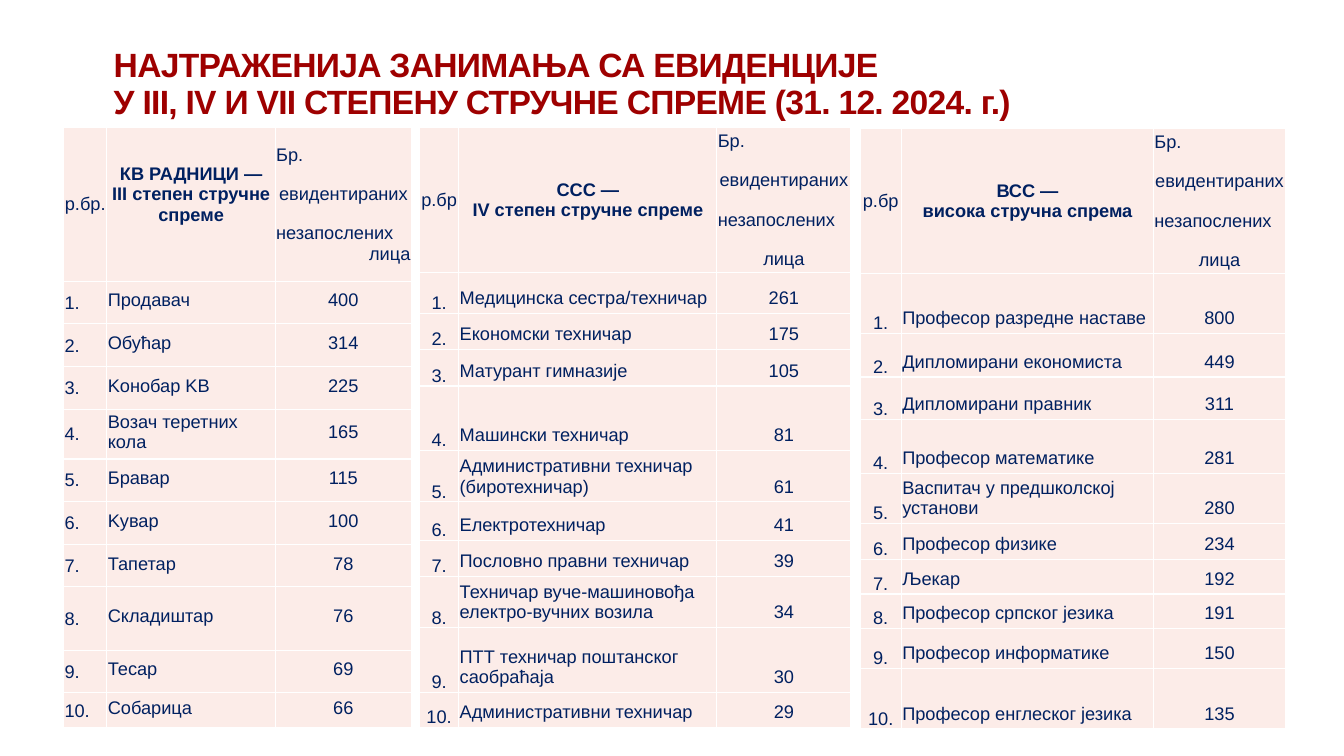
from lxml.etree import SubElement
from pptx import Presentation
from pptx.dml.color import RGBColor
from pptx.enum.text import MSO_ANCHOR as Anchor, PP_ALIGN as Align
from pptx.oxml import parse_xml
from pptx.oxml.ns import nsdecls, qn
from pptx.util import Inches, Pt

COLORS = {"title": "9E0000", "text": "002060", "cell": "FCECE8", "border": "FFFFFF"}
FONT = "Arial"
TITLE = ("НАЈТРАЖЕНИЈА ЗАНИМАЊА СА ЕВИДЕНЦИЈЕ\v"
         "У III, IV И VII СТЕПЕНУ СТРУЧНЕ СПРЕМЕ (31. 12. 2024. г.)")
COUNT_HEADING = ["Бр.", "евидентираних", "незапослених", "лица"]
HEADING_GAP = 13.5

LEVELS = [
    {
        "at": (0.63, 1.26), "columns": (0.43, 1.67, 1.35),
        "rows": (1.53, 0.42, 0.43, 0.42, 0.42, 0.42, 0.43, 0.42, 0.63, 0.42, 0.35),
        "number": "р.бр.", "heading": ["КВ РАДНИЦИ —", "III степен стручне", "спреме"],
        "heading_bottom": 0.2, "last_line": (Align.RIGHT, 0),
        "anchor": Anchor.MIDDLE, "number_align": Align.LEFT,
        "jobs": [("Продавач", 400), ("Обућар", 314), ("Kонобар KВ", 225),
                 ("Возач теретних кола", 165), ("Бравар", 115), ("Kувар", 100),
                 ("Тапетар", 78), ("Складиштар", 76), ("Тесар", 69), ("Собарица", 66)],
    },
    {
        "at": (4.16, 1.26), "columns": (0.39, 2.56, 1.33),
        "rows": (1.43, 0.41, 0.36, 0.36, 0.64, 0.51, 0.38, 0.36, 0.51, 0.64, 0.35),
        "number": "р.бр", "heading": ["ССС —", "IV степен стручне спреме"],
        "heading_bottom": 0, "last_line": (Align.CENTER, HEADING_GAP),
        "anchor": Anchor.BOTTOM, "number_align": Align.CENTER,
        "jobs": [("Медицинска сестра/техничар", 261), ("Економски техничар", 175),
                 ("Матурант гимназије", 105), ("Машински техничар", 81),
                 ("Административни техничар (биротехничар)", 61),
                 ("Електротехничар", 41), ("Пословно правни техничар", 39),
                 ("Техничар вуче-машиновођа електро-вучних возила", 34),
                 ("ПТТ техничар поштанског саобраћаја", 30),
                 ("Административни техничар", 29)],
    },
    {
        "at": (8.53, 1.27), "columns": (0.41, 2.5, 1.31),
        "rows": (1.44, 0.6, 0.43, 0.42, 0.54, 0.48, 0.36, 0.34, 0.34, 0.4, 0.6),
        "number": "р.бр", "heading": ["ВСС —", "висока стручна спрема"],
        "heading_bottom": 0, "last_line": (Align.CENTER, HEADING_GAP),
        "anchor": Anchor.BOTTOM, "number_align": Align.CENTER,
        "jobs": [("Професор разредне наставе", 800), ("Дипломирани економиста", 449),
                 ("Дипломирани правник", 311), ("Професор математике", 281),
                 ("Васпитач у предшколској установи", 280), ("Професор физике", 234),
                 ("Љекар", 192), ("Професор српског језика", 191),
                 ("Професор информатике", 150), ("Професор енглеског језика", 135)],
    },
]


def style(font, size, color, bold=False):
    font.name, font.size, font.bold = FONT, Pt(size), bold
    font.color.rgb = RGBColor.from_string(COLORS[color])


def fill_cell(cell, lines, align, anchor, bottom=0, bold=False):
    cell.margin_left = cell.margin_right = cell.margin_top = Inches(0.01)
    cell.margin_bottom = Inches(bottom)
    cell.vertical_anchor = anchor
    cell.fill.solid()
    cell.fill.fore_color.rgb = RGBColor.from_string(COLORS["cell"])
    properties = cell._tc.get_or_add_tcPr()
    for order, side in enumerate("LRTB"):
        properties.insert(order, parse_xml(
            f'<a:ln{side} {nsdecls("a")} w="12700"><a:solidFill>'
            f'<a:srgbClr val="{COLORS["border"]}"/></a:solidFill></a:ln{side}>'))
    cell.text_frame.text = "\n".join(lines)
    for paragraph in cell.text_frame.paragraphs:
        paragraph.alignment = align
        for run in paragraph.runs:
            style(run.font, 13, "text", bold)


def space_count_heading(cell, last_line):
    layout = [(Align.LEFT, 0), (Align.CENTER, HEADING_GAP),
              (Align.LEFT, HEADING_GAP), last_line]
    for paragraph, (align, gap) in zip(cell.text_frame.paragraphs, layout):
        paragraph.alignment = align
        paragraph.space_before = Pt(gap)


def add_level(slide, level):
    widths, heights = level["columns"], level["rows"]
    box = [Inches(v) for v in (*level["at"], sum(widths), sum(heights))]
    table = slide.shapes.add_table(len(heights), len(widths), *box).table
    table.first_row = table.horz_banding = False
    for column, width in zip(table.columns, widths):
        column.width = Inches(width)
    for row, height in zip(table.rows, heights):
        row.height = Inches(height)

    number, heading, count = table.rows[0].cells
    fill_cell(number, [level["number"]], Align.CENTER, Anchor.MIDDLE)
    fill_cell(heading, level["heading"], Align.CENTER, Anchor.MIDDLE,
              level["heading_bottom"], True)
    fill_cell(count, COUNT_HEADING, Align.CENTER, Anchor.MIDDLE)
    space_count_heading(count, level["last_line"])

    anchor = level["anchor"]
    for rank, (job, people) in enumerate(level["jobs"], 1):
        number, name, count = table.rows[rank].cells
        fill_cell(number, [f"{rank}."], level["number_align"], anchor)
        fill_cell(name, [job], Align.LEFT, anchor, 0.05)
        fill_cell(count, [str(people)], Align.CENTER, anchor, 0.05)


def add_title(slide):
    frame = slide.shapes.add_textbox(
        *[Inches(v) for v in (1.03, 0.42, 11.27, 0.85)]).text_frame
    frame.word_wrap = True
    frame.vertical_anchor = Anchor.MIDDLE
    paragraph = frame.paragraphs[0]
    paragraph.text = TITLE
    paragraph.line_spacing = 0.9
    for run in paragraph.runs:
        style(run.font, 24, "title", True)
        run.font._element.set("spc", "-50")
    for line_break in paragraph._p.findall(qn("a:br")):
        SubElement(line_break, qn("a:rPr"), sz="2400")


def main():
    deck = Presentation()
    deck.slide_width, deck.slide_height = Inches(13.33), Inches(7.5)
    slide = deck.slides.add_slide(deck.slide_layouts[6])
    add_title(slide)
    for level in LEVELS:
        add_level(slide, level)
    deck.save("out.pptx")


if __name__ == "__main__":
    main()
